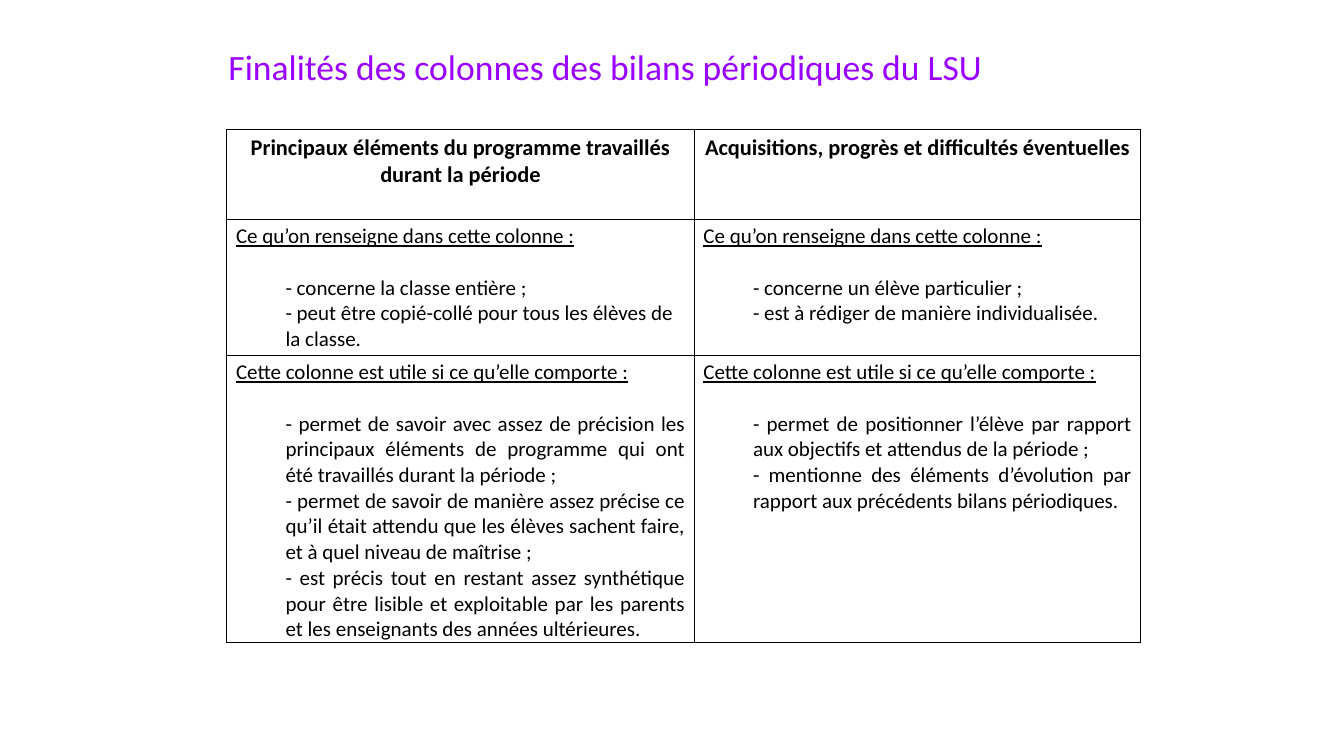
import pptx
import pptx.dml.color
import pptx.enum.text
import pptx.oxml
import pptx.oxml.ns
import pptx.util

Pt = pptx.util.Pt
ALIGN = pptx.enum.text.PP_ALIGN
COLORS = {"title": "9900FF", "text": "000000", "border": "000000"}
COLUMN_WIDTHS = (333.9, 319)
ROW_HEIGHTS = (64, 94, 203)

HEADERS = (
    "Principaux éléments du programme travaillés durant la période",
    "Acquisitions, progrès et difficultés éventuelles",
)
# Each row: heading, alignment of its points, points of each column
ROWS = (
    ("Ce qu’on renseigne dans cette colonne :", ALIGN.LEFT, (
        ("- concerne la classe entière ;",
         "- peut être copié-collé pour tous les élèves de la classe."),
        ("- concerne un élève particulier ;",
         "- est à rédiger de manière individualisée."),
    )),
    ("Cette colonne est utile si ce qu’elle comporte :", ALIGN.JUSTIFY, (
        ("- permet de savoir avec assez de précision les principaux éléments "
         "de programme qui ont été travaillés durant la période ;",
         "- permet de savoir de manière assez précise ce qu’il était attendu "
         "que les élèves sachent faire, et à quel niveau de maîtrise ;",
         "- est précis tout en restant assez synthétique pour être lisible et "
         "exploitable par les parents et les enseignants des années ultérieures."),
        ("- permet de positionner l’élève par rapport aux objectifs et "
         "attendus de la période ;",
         "- mentionne des éléments d’évolution par rapport aux précédents "
         "bilans périodiques."),
    )),
)


def set_values(target, values):
    for name, value in values.items():
        setattr(target, name, value)


class SlideBuilder:
    font_name = "Calibri"

    def __init__(self, slide):
        self.slide = slide

    def add_text(self, para, text, color="text", para_format=None, **font_format):
        set_values(para, para_format or {})
        span = para.add_run()
        span.text = text
        set_values(span.font, {"name": self.font_name, **font_format})
        span.font.color.rgb = pptx.dml.color.RGBColor.from_string(COLORS[color])

    def title(self, text, left, top, width, height):
        box = self.slide.shapes.title
        set_values(box, {"left": Pt(left), "top": Pt(top),
                         "width": Pt(width), "height": Pt(height)})
        set_values(box.text_frame, {
            "word_wrap": True,
            "vertical_anchor": pptx.enum.text.MSO_ANCHOR.MIDDLE,
            "auto_size": pptx.enum.text.MSO_AUTO_SIZE.SHAPE_TO_FIT_TEXT,
        })
        self.add_text(box.text_frame.paragraphs[0], text, "title",
                      {"alignment": ALIGN.LEFT, "line_spacing": 0.9}, size=Pt(25.4))

    def table(self, left, top, widths, heights):
        frame = self.slide.shapes.add_table(
            len(heights), len(widths), Pt(left), Pt(top),
            Pt(sum(widths)), Pt(sum(heights)))
        table = frame.table
        set_values(table, {"first_row": False, "horz_banding": False})
        for column, width in zip(table.columns, widths):
            column.width = Pt(width)
        for row, height in zip(table.rows, heights):
            row.height = Pt(height)
        for cell in table.iter_cells():
            set_values(cell, {"margin_left": Pt(6.6), "margin_right": Pt(6.6),
                              "margin_top": Pt(3.4), "margin_bottom": Pt(3.4)})
            self.borders(cell)
            cell.fill.background()
        return table

    def borders(self, cell):
        properties = cell._tc.get_or_add_tcPr()
        for side in ("lnL", "lnR", "lnT", "lnB"):
            properties.append(pptx.oxml.parse_xml(
                f'<a:{side} {pptx.oxml.ns.nsdecls("a")} w="{Pt(0.75)}">'
                f'<a:solidFill><a:srgbClr val="{COLORS["border"]}"/></a:solidFill>'
                f'</a:{side}>'))

    def header_cell(self, cell, text):
        self.add_text(cell.text_frame.paragraphs[0], text,
                      para_format={"alignment": ALIGN.CENTER}, size=Pt(16), bold=True)

    def points_cell(self, cell, heading, points, alignment):
        """Underlined heading, a one-line gap, then indented points."""
        self.add_text(cell.text_frame.paragraphs[0], heading,
                      para_format={"space_after": Pt(18.3)},
                      size=Pt(15), underline=True)
        for point in points:
            para = cell.text_frame.add_paragraph()
            para._p.get_or_add_pPr().set("marL", str(Pt(35.4)))
            self.add_text(para, point, para_format={"alignment": alignment}, size=Pt(15))


def main():
    deck = pptx.Presentation()
    set_values(deck, {"slide_width": Pt(960), "slide_height": Pt(540)})
    page = SlideBuilder(deck.slides.add_slide(deck.slide_layouts[5]))
    page.title("Finalités des colonnes des bilans périodiques du LSU",
               156, 31.5, 648, 35.5)
    table = page.table(162, 92.5, COLUMN_WIDTHS, ROW_HEIGHTS)
    for column, text in enumerate(HEADERS):
        page.header_cell(table.cell(0, column), text)
    for row, (heading, alignment, columns) in enumerate(ROWS, start=1):
        for column, points in enumerate(columns):
            page.points_cell(table.cell(row, column), heading, points, alignment)
    deck.save("out.pptx")


if __name__ == "__main__":
    main()
